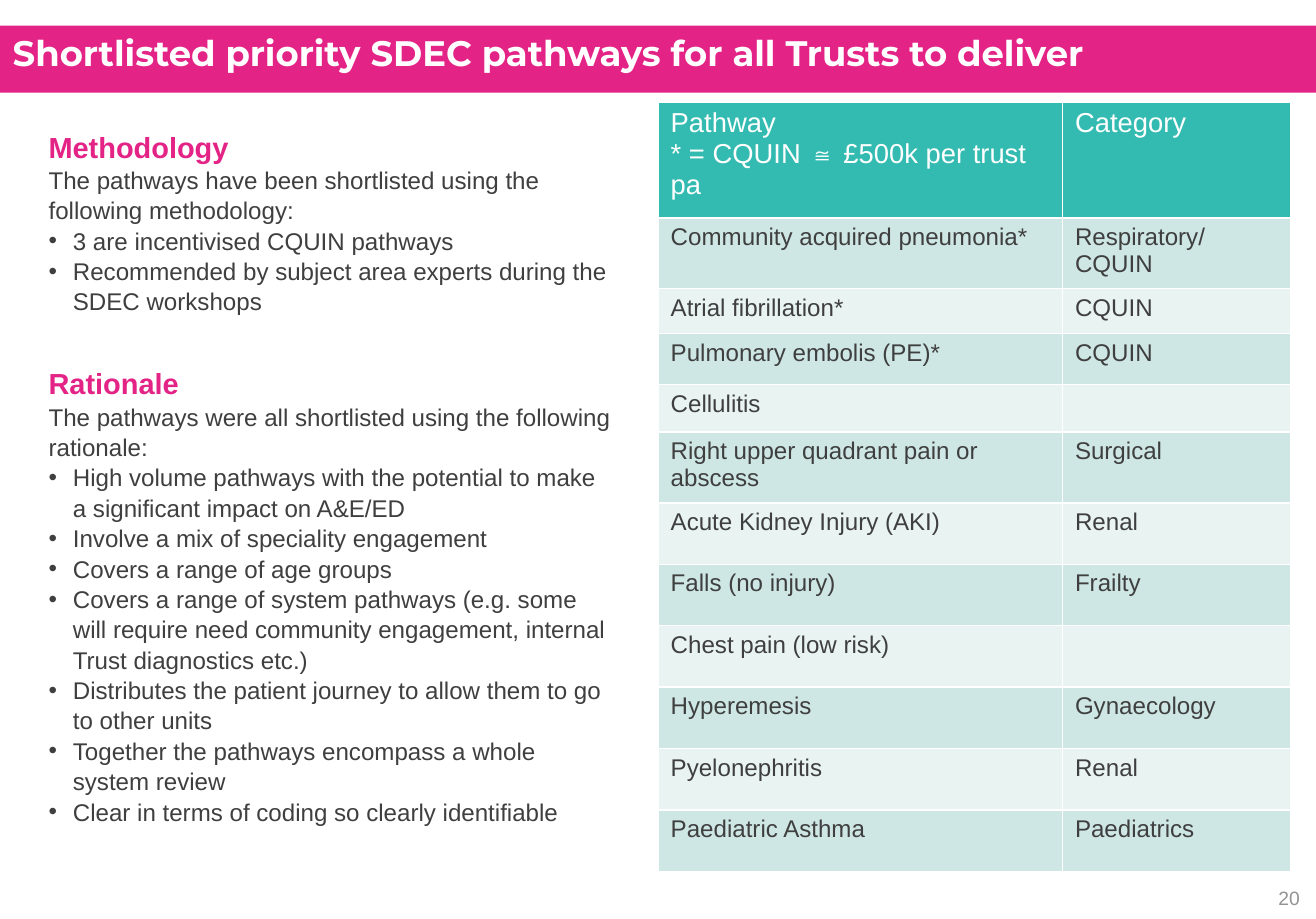
from lxml import etree
from pptx import Presentation
from pptx.dml.color import RGBColor
from pptx.enum.text import MSO_ANCHOR, MSO_AUTO_SIZE, PP_ALIGN
from pptx.oxml.ns import qn
from pptx.util import Inches, Pt

TOP, MIDDLE = MSO_ANCHOR.TOP, MSO_ANCHOR.MIDDLE
LEFT, RIGHT = PP_ALIGN.LEFT, PP_ALIGN.RIGHT
NO_AUTOFIT = MSO_AUTO_SIZE.NONE

PINK, TEAL, WHITE = "E32486", "33BBB1", "FFFFFF"
DARK, GREY = "3F3F3F", "939393"
BANDS = ("CEE7E4", "E8F3F2")
BODY_FONT, TITLE_FONT = "Arial", "Montserrat"

SECTIONS = [
    ("Methodology",
     "The pathways have been shortlisted using the following methodology:",
     ["3 are incentivised CQUIN pathways",
      "Recommended by subject area experts during the SDEC workshops"]),
    ("Rationale",
     "The pathways were all shortlisted using the following rationale:",
     ["High volume pathways with the potential to make a significant impact on A&E/ED",
      "Involve a mix of speciality engagement",
      "Covers a range of age groups",
      "Covers a range of system pathways (e.g. some will require need community "
      "engagement, internal Trust diagnostics etc.)",
      "Distributes the patient journey to allow them to go to other units",
      "Together the pathways encompass a whole system review",
      "Clear in terms of coding so clearly identifiable"]),
]

PATHWAYS = [
    ("Pathway\n* = CQUIN ≅ £500k per trust pa", "Category", 1.0),
    ("Community acquired pneumonia*", "Respiratory/\nCQUIN", 0.61),
    ("Atrial fibrillation*", "CQUIN", 0.39),
    ("Pulmonary embolis (PE)*", "CQUIN", 0.44),
    ("Cellulitis", "", 0.41),
    ("Right upper quadrant pain or abscess", "Surgical", 0.61),
    ("Acute Kidney Injury (AKI)", "Renal", 0.53),
    ("Falls (no injury)", "Frailty", 0.53),
    ("Chest pain (low risk)", "", 0.53),
    ("Hyperemesis", "Gynaecology", 0.53),
    ("Pyelonephritis", "Renal", 0.53),
    ("Paediatric Asthma", "Paediatrics", 0.53),
]


def rgb(colour):
    """Turn a hex string into a colour."""
    return RGBColor.from_string(colour)


def style(paragraph, size, colour, bold=False, font=BODY_FONT):
    """Format every run of a paragraph."""
    for run in paragraph.runs:
        run.font.name = font
        run.font.size = Pt(size)
        run.font.bold = bold
        run.font.color.rgb = rgb(colour)


def set_margins(frame):
    """Give a text frame the slide's common insets."""
    frame.margin_left = frame.margin_right = Inches(0.11)
    frame.margin_top = frame.margin_bottom = Inches(0.05)


def add_text_frame(slide, left, top, width, height):
    """Add a wrapping text box and return its frame."""
    frame = slide.shapes.add_textbox(
        Inches(left), Inches(top), Inches(width), Inches(height)).text_frame
    frame.word_wrap = True
    set_margins(frame)
    return frame


def add_bullet(paragraph):
    """Give a paragraph a hanging round bullet."""
    properties = paragraph._p.get_or_add_pPr()
    properties.set("marL", str(Inches(0.21)))
    properties.set("indent", str(-Inches(0.21)))
    etree.SubElement(properties, qn("a:buFont"), typeface=BODY_FONT)
    etree.SubElement(properties, qn("a:buChar"), char="•")


def set_title(slide):
    """Format the title placeholder as a pink band."""
    title = slide.shapes.title
    title.left, title.top = Inches(0), Inches(0.22)
    title.width, title.height = Inches(11.36), Inches(0.58)
    title.fill.solid()
    title.fill.fore_color.rgb = rgb(PINK)
    frame = title.text_frame
    frame.text = "Shortlisted priority SDEC pathways for all Trusts to deliver"
    frame.auto_size = NO_AUTOFIT
    frame.vertical_anchor = TOP
    set_margins(frame)
    heading = frame.paragraphs[0]
    heading.alignment = LEFT
    style(heading, 22, WHITE, True, TITLE_FONT)


def add_sections(slide):
    """Write the headed sections with their bullets."""
    frame = add_text_frame(slide, 0.31, 1.05, 5.1, 6.2)
    for number, (title, intro, points) in enumerate(SECTIONS):
        heading = frame.add_paragraph() if number else frame.paragraphs[0]
        heading.text = title
        heading.line_spacing = 1.05
        if number:
            heading.space_before = Pt(30)
        style(heading, 18, PINK, True)
        for position, text in enumerate([intro] + points):
            line = frame.add_paragraph()
            line.text = text
            line.line_spacing = 1.05
            if position:
                add_bullet(line)
            style(line, 15, DARK)


def add_borders(cell):
    """Draw thin white borders round a table cell."""
    properties = cell._tc.get_or_add_tcPr()
    for side in ("lnL", "lnR", "lnT", "lnB"):
        border = etree.SubElement(properties, qn(f"a:{side}"), w=str(Pt(1)))
        fill = etree.SubElement(border, qn("a:solidFill"))
        etree.SubElement(fill, qn("a:srgbClr"), val=WHITE)


def fill_cell(cell, text, fill, size, colour):
    """Write and format one table cell."""
    add_borders(cell)
    cell.fill.solid()
    cell.fill.fore_color.rgb = rgb(fill)
    set_margins(cell)
    cell.text_frame.text = text
    for paragraph in cell.text_frame.paragraphs:
        style(paragraph, size, colour)


def add_pathway_table(slide):
    """Add the table of pathways and categories."""
    table = slide.shapes.add_table(
        len(PATHWAYS), 2, Inches(5.68), Inches(0.88),
        Inches(5.46), Inches(6.64)).table
    table.columns[0].width = Inches(3.49)
    table.columns[1].width = Inches(1.97)
    for row, (pathway, category, height) in enumerate(PATHWAYS):
        table.rows[row].height = Inches(height)
        look = (BANDS[(row - 1) % 2], 15, DARK) if row else (TEAL, 17, WHITE)
        for column, text in enumerate((pathway, category)):
            fill_cell(table.cell(row, column), text, *look)


def add_page_number(slide):
    """Write the page number at the lower right."""
    frame = add_text_frame(slide, 8.68, 7.54, 2.65, 0.42)
    frame.vertical_anchor = MIDDLE
    frame.text = "20"
    frame.paragraphs[0].alignment = RIGHT
    style(frame.paragraphs[0], 12, GREY)


def main():
    """Build and save the slide."""
    presentation = Presentation()
    presentation.slide_width = Inches(11.36)
    presentation.slide_height = Inches(7.93)
    slide = presentation.slides.add_slide(presentation.slide_layouts[5])
    set_title(slide)
    add_pathway_table(slide)
    add_sections(slide)
    add_page_number(slide)
    presentation.save("out.pptx")


if __name__ == "__main__":
    main()
